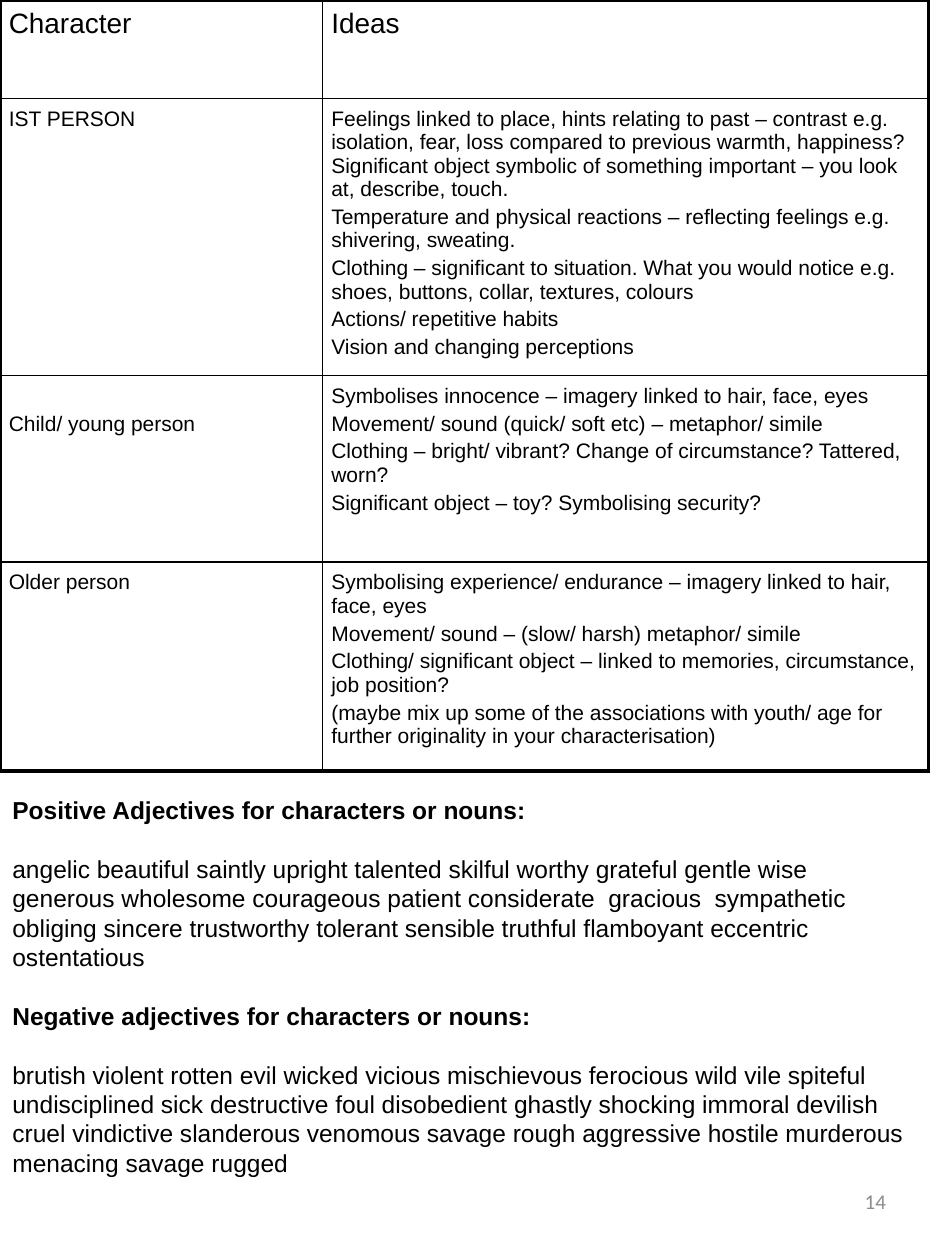
from dataclasses import dataclass

from lxml.etree import SubElement
from pptx import Presentation
from pptx.dml.color import RGBColor
from pptx.enum.text import MSO_ANCHOR, MSO_AUTO_SIZE, PP_ALIGN
from pptx.oxml.ns import qn
from pptx.util import Inches, Pt


@dataclass(frozen=True)
class Theme:
    ink: str = "000000"
    grey: str = "8C8C8C"
    font: str = "Arial"
    number_font: str = "Calibri"
    header: int = 16
    cell: int = 12
    body: int = 14
    number: int = 12
    outer_line: float = 2.25
    inner_line: float = 1


THEME = Theme()
COLUMN_WIDTHS = [2.56, 4.81]
ROW_HEIGHTS = [0.78, 2.2, 1.48, 1.66]
CELL_INSET = 0.07
LOWERED_INSET = 0.29

ROWS = [
    ("Character", ["Ideas"]),
    ("IST PERSON", [
        "Feelings linked to place, hints relating to past – contrast e.g. isolation, fear, loss "
        "compared to previous warmth, happiness? Significant object symbolic of something "
        "important – you look at, describe, touch.",
        "Temperature and physical reactions – reflecting feelings e.g. shivering, sweating.",
        "Clothing – significant to situation. What you would notice e.g. shoes, buttons, collar, "
        "textures, colours",
        "Actions/ repetitive habits",
        "Vision and changing perceptions",
    ]),
    ("Child/ young person", [
        "Symbolises innocence – imagery linked to hair, face, eyes",
        "Movement/ sound (quick/ soft etc) – metaphor/ simile",
        "Clothing – bright/ vibrant? Change of circumstance? Tattered, worn?",
        "Significant object – toy? Symbolising security?",
    ]),
    ("Older person", [
        "Symbolising experience/ endurance – imagery linked to hair, face, eyes",
        "Movement/ sound – (slow/ harsh) metaphor/ simile",
        "Clothing/ significant object – linked to memories, circumstance, job position?",
        "(maybe mix up some of the associations with youth/ age for further originality in your "
        "characterisation)",
    ]),
]

ADJECTIVES = [
    ("Positive Adjectives for characters or nouns:",
     "angelic beautiful saintly upright talented skilful worthy grateful gentle wise generous "
     "wholesome courageous patient considerate  gracious  sympathetic obliging sincere "
     "trustworthy tolerant sensible truthful flamboyant eccentric ostentatious"),
    ("Negative adjectives for characters or nouns:",
     "brutish violent rotten evil wicked vicious mischievous ferocious wild vile spiteful "
     "undisciplined sick destructive foul disobedient ghastly shocking immoral devilish cruel "
     "vindictive slanderous venomous savage rough aggressive hostile murderous menacing savage "
     "rugged"),
]


def format_para(para, size, color=THEME.ink, font=THEME.font, bold=False):
    for span in para.runs:
        span.font.size = Pt(size)
        span.font.name = font
        span.font.bold = bold
        span.font.color.rgb = RGBColor.from_string(color)


def add_border(cell, side, width):
    line = SubElement(cell._tc.get_or_add_tcPr(), qn(f"a:ln{side}"), w=str(Pt(width)))
    fill = SubElement(line, qn("a:solidFill"))
    SubElement(fill, qn("a:srgbClr"), val=THEME.ink)


def fill_cell(cell, lines, size, top_inset=CELL_INSET):
    cell.margin_left = cell.margin_right = cell.margin_bottom = Inches(CELL_INSET)
    cell.margin_top = Inches(top_inset)
    cell.text_frame.text = "\n".join(lines)
    for para in cell.text_frame.paragraphs:
        para.space_before = Pt(0.2 * size)
        format_para(para, size)


def add_ideas_table(page):
    last_row, last_column = len(ROWS) - 1, len(COLUMN_WIDTHS) - 1
    table = page.shapes.add_table(
        len(ROWS), len(COLUMN_WIDTHS), 0, 0,
        Inches(sum(COLUMN_WIDTHS)), Inches(sum(ROW_HEIGHTS))).table
    table.first_row = table.horz_banding = False
    for column, width in zip(table.columns, COLUMN_WIDTHS):
        column.width = Inches(width)
    for row, height in zip(table.rows, ROW_HEIGHTS):
        row.height = Inches(height)
    for r, (character, ideas) in enumerate(ROWS):
        size = THEME.header if r == 0 else THEME.cell
        inset = LOWERED_INSET if character.startswith("Child") else CELL_INSET
        fill_cell(table.cell(r, 0), [character], size, inset)
        fill_cell(table.cell(r, 1), ideas, size)
        for c in range(len(COLUMN_WIDTHS)):
            cell = table.cell(r, c)
            outer = {"L": c == 0, "R": c == last_column, "T": r == 0, "B": r == last_row}
            for side, is_outer in outer.items():
                add_border(cell, side, THEME.outer_line if is_outer else THEME.inner_line)
            cell.fill.background()


def add_text_box(page, left, top, width, height, lines):
    box = page.shapes.add_textbox(Inches(left), Inches(top), Inches(width), Inches(height))
    box.text_frame.word_wrap = True
    box.text_frame.text = "\n".join(lines)
    return box.text_frame


def add_adjectives(page):
    lines = [line for group in ADJECTIVES for line in group]
    frame = add_text_box(page, 0, 6.26, 7.37, 2.93, lines)
    frame.auto_size = MSO_AUTO_SIZE.SHAPE_TO_FIT_TEXT
    for index, para in enumerate(frame.paragraphs):
        if index:
            para.space_before = Pt(1.2 * THEME.body)
        format_para(para, THEME.body, bold=index % 2 == 0)


def add_page_number(page, number):
    frame = add_text_box(page, 5.38, 9.27, 1.75, 0.53, [number])
    frame.vertical_anchor = MSO_ANCHOR.MIDDLE
    para = frame.paragraphs[0]
    para.alignment = PP_ALIGN.RIGHT
    format_para(para, THEME.number, THEME.grey, THEME.number_font)


def main():
    deck = Presentation()
    deck.slide_width, deck.slide_height = Inches(7.5), Inches(10)
    page = deck.slides.add_slide(deck.slide_layouts[6])
    add_ideas_table(page)
    add_adjectives(page)
    add_page_number(page, "14")
    deck.save("out.pptx")


if __name__ == "__main__":
    main()
